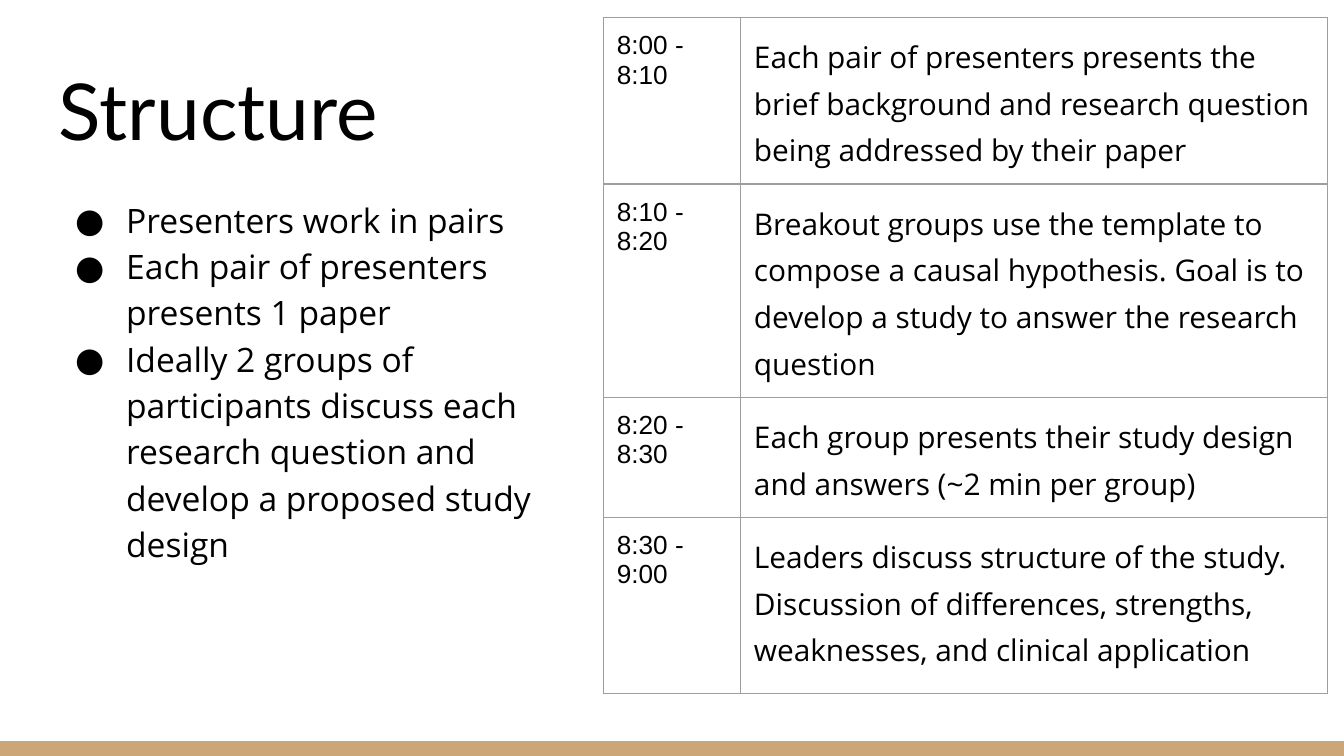
from lxml import etree
from pptx import Presentation, util as u
from pptx.dml.color import RGBColor
from pptx.enum import shapes, text
from pptx.oxml.ns import qn

WIDTH = 10
HEIGHT = WIDTH * 9 / 16
LEFT = 0.34
BAND = 0.11
BLACK, GREY, TAN = "000000", "9E9E9E", "CCA677"
BODY_FONT = "Open Sans"
COLUMNS = (1.02, 4.37)
BULLETS = (
    "Presenters work in pairs",
    "Each pair of presenters presents 1 paper",
    "Ideally 2 groups of participants discuss each research question "
    "and develop a proposed study design",
)
SCHEDULE = (
    (1.12, "8:00 - 8:10", "Each pair of presenters presents the brief background "
     "and research question being addressed by their paper"),
    (1.41, "8:10 - 8:20", "Breakout groups use the template to compose a causal hypothesis. "
     "Goal is to develop a study to answer the research question"),
    (0.8, "8:20 - 8:30", "Each group presents their study design "
     "and answers (~2 min per group)"),
    (1.31, "8:30 - 9:00", "Leaders discuss structure of the study. "
     "Discussion of differences, strengths, weaknesses, and clinical application"),
)


def color(value):
    """Turn a hex string into a colour."""
    return RGBColor.from_string(value)


def inches(*lengths):
    """Convert lengths in inches to slide units."""
    return [u.Inches(length) for length in lengths]


def child(parent, tag, **attributes):
    """Append an XML element to its parent."""
    return etree.SubElement(parent, qn(tag), attributes)


def set_margins(holder):
    """Give a text frame or cell even inner margins."""
    holder.margin_left = holder.margin_right = u.Inches(0.1)
    holder.margin_top = holder.margin_bottom = u.Inches(0.1)


def format_paragraph(paragraph, font, size, spacing=None, after=None):
    """Set the spacing of a paragraph and the font of its runs."""
    paragraph.line_spacing = spacing
    paragraph.space_after = None if after is None else u.Pt(after)
    for run in paragraph.runs:
        run.font.name, run.font.size = font, u.Pt(size)
        run.font.color.rgb = color(BLACK)


def add_text(slide, box, content, font, size, anchor, spacing=None):
    """Add a wrapped text box and return its text frame."""
    frame = slide.shapes.add_textbox(*inches(*box)).text_frame
    frame.word_wrap = True
    frame.auto_size = text.MSO_AUTO_SIZE.TEXT_TO_FIT_SHAPE
    frame.vertical_anchor = anchor
    set_margins(frame)
    frame.text = content
    for paragraph in frame.paragraphs:
        format_paragraph(paragraph, font, size, spacing)
    return frame


def add_bullet(paragraph):
    """Give a paragraph a round bullet with a hanging indent."""
    properties = paragraph._p.get_or_add_pPr()
    properties.set("marL", str(u.Inches(0.5)))
    properties.set("indent", str(u.Inches(-0.38)))
    child(child(properties, "a:buClr"), "a:srgbClr", val=BLACK)
    child(properties, "a:buFont", typeface=BODY_FONT)
    child(properties, "a:buChar", char="●")


def add_borders(cell):
    """Draw a thin line on all four sides of a cell."""
    properties = cell._tc.get_or_add_tcPr()
    for position, side in enumerate("LRTB"):
        line = etree.Element(qn(f"a:ln{side}"), w=str(u.Pt(0.75)))
        child(child(line, "a:solidFill"), "a:srgbClr", val=GREY)
        properties.insert(position, line)


def fill_cell(cell, content, **style):
    """Write one plain bordered cell."""
    cell.fill.background()
    set_margins(cell)
    cell.text = content
    format_paragraph(cell.text_frame.paragraphs[0], **style)
    add_borders(cell)


def add_schedule(slide):
    """Add the table of times and activities."""
    height = sum(row[0] for row in SCHEDULE)
    frame = slide.shapes.add_table(len(SCHEDULE), len(COLUMNS),
                                   *inches(4.49, 0.13, sum(COLUMNS), height))
    table = frame.table
    table.first_row = table.horz_banding = False
    for column, width in zip(table.columns, COLUMNS):
        column.width = u.Inches(width)
    for row, (row_height, time, activity) in zip(table.rows, SCHEDULE):
        row.height = u.Inches(row_height)
        fill_cell(row.cells[0], time, font="Arial", size=14)
        fill_cell(row.cells[1], activity, font=BODY_FONT, size=16, spacing=1.15, after=16)


def add_footer(slide):
    """Add the coloured band along the bottom edge."""
    band = slide.shapes.add_shape(shapes.MSO_SHAPE.RECTANGLE,
                                  *inches(0, HEIGHT - BAND, WIDTH, BAND))
    band.shadow.inherit = False
    band.fill.solid()
    band.fill.fore_color.rgb = color(TAN)
    band.line.fill.background()


def main():
    """Build and save the slide."""
    presentation = Presentation()
    presentation.slide_width, presentation.slide_height = inches(WIDTH, HEIGHT)
    slide = presentation.slides.add_slide(presentation.slide_layouts[6])
    add_footer(slide)
    add_text(slide, (LEFT, 0.35, WIDTH - 2 * LEFT, 0.91), "Structure",
             "Lato", 42, text.MSO_ANCHOR.BOTTOM)
    body = add_text(slide, (LEFT, 1.34, 4.01, 3.67), "\n".join(BULLETS),
                    BODY_FONT, 18, text.MSO_ANCHOR.TOP, 1.15)
    for paragraph in body.paragraphs:
        add_bullet(paragraph)
    add_schedule(slide)
    presentation.save("out.pptx")


if __name__ == "__main__":
    main()
